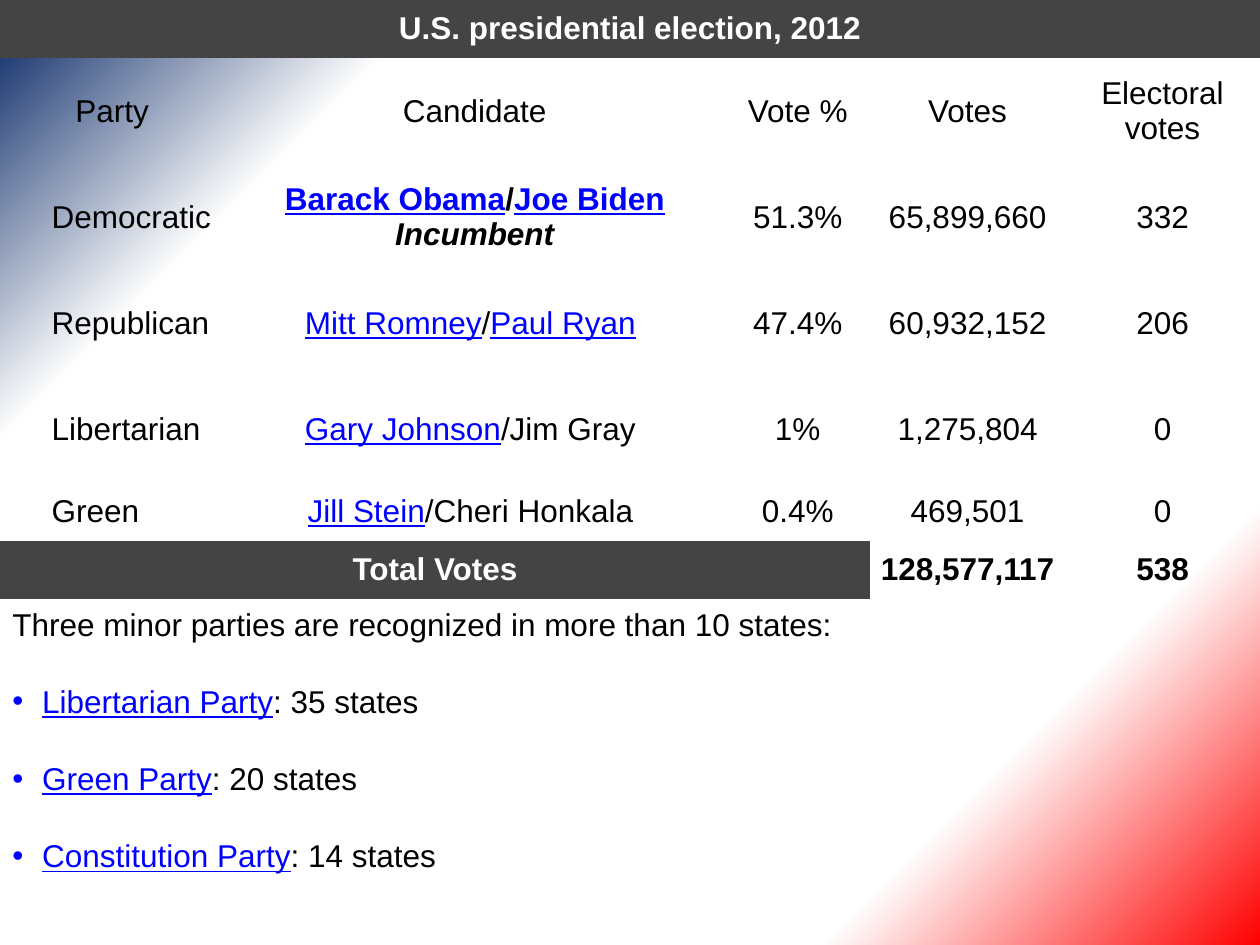
from pptx import Presentation
from pptx.dml.color import RGBColor
from pptx.enum.text import MSO_ANCHOR, PP_ALIGN
from pptx.oxml import parse_xml
from pptx.oxml.ns import nsdecls
from pptx.util import Cm, Pt
from lxml.etree import SubElement

# Content: a cell is a list of (text, style); b bold, i italic, u link look, w white
HEAD = [("U.S. presidential election, 2012", "bw")]
LABELS = ["Party", "Candidate", "Vote\u00a0%", "Votes", "Electoral votes"]
ROWS = [
    ("Democratic", [("Barack Obama", "bu"), ("/", "b"), ("Joe Biden", "bu"),
                    (" ", ""), ("Incumbent", "bi")],
     "51.3%", "65,899,660", "332"),
    ("Republican", [("Mitt Romney", "u"), ("/", ""), ("Paul Ryan", "u"), (" ", "")],
     "47.4%", "60,932,152", "206"),
    ("Libertarian", [("Gary Johnson", "u"), ("/Jim Gray ", "")],
     "1%", "1,275,804", "0"),
    ("Green", [("Jill Stein", "u"), ("/Cheri Honkala ", "")],
     "0.4%", "469,501", "0"),
]
TOTAL = [("Total Votes", "bw")]
SUMS = ["128,577,117", "538"]
INTRO = "Three minor parties are recognized in more than 10 states:"
STATES = [("Libertarian Party", 35), ("Green Party", 20), ("Constitution Party", 14)]

THEME = {
    "font": "Arial", "size": Pt(18),
    "text": RGBColor.from_string("000000"),
    "link": RGBColor.from_string("0000FF"),
    "white": RGBColor.from_string("FFFFFF"),
    "band": RGBColor.from_string("444444"),
    "stops": [(0, "FF0000"), (20, "FFFFFF"), (50, "FFFFFF"),
              (80, "FFFFFF"), (100, "002060")],
    "angle": 225,
    "plain": "{2D5ABB26-0587-4C30-8999-92F81FD0307C}",
}
COLS = [0.96, 3.56, 10.1, 2.92, 3.93, 3.93]
LOW, TALL = 1.17, 2.14
HIGHS = [LOW] + [TALL] * 4 + [LOW] * 2
WIDE, DEEP = 25.4, 19.05


def write(para, runs, align=PP_ALIGN.LEFT):
    para.alignment = align
    para.font.name, para.font.size = THEME["font"], THEME["size"]
    for text, style in runs:
        run = para.add_run()
        run.text = text
        font = run.font
        font.bold, font.italic = "b" in style, "i" in style
        font.underline = "u" in style
        tone = "link" if "u" in style else "white" if "w" in style else "text"
        font.color.rgb = THEME[tone]


def put(grid, row, col, runs, align=PP_ALIGN.CENTER):
    runs = [(runs, "")] if isinstance(runs, str) else runs
    write(grid.cell(row, col).text_frame.paragraphs[0], runs, align)


def band(grid, row, last, runs):
    cell = grid.cell(row, 0)
    cell.merge(grid.cell(row, last))
    cell.fill.solid()
    cell.fill.fore_color.rgb = THEME["band"]
    put(grid, row, 0, runs)


def paint(slide):
    stops = "".join(f'<a:gs pos="{pos * 1000}"><a:srgbClr val="{tone}"/></a:gs>'
                    for pos, tone in THEME["stops"])
    back = parse_xml(
        f'<p:bg {nsdecls("p", "a")}><p:bgPr><a:gradFill rotWithShape="1">'
        f'<a:gsLst>{stops}</a:gsLst>'
        f'<a:lin ang="{THEME["angle"] * 60000}" scaled="0"/></a:gradFill>'
        '<a:effectLst/></p:bgPr></p:bg>')
    slide.element.cSld.insert(0, back)


def results(slide):
    frame = slide.shapes.add_table(len(HIGHS), len(COLS), 0, 0,
                                   Cm(WIDE), Cm(sum(HIGHS)))
    grid = frame.table
    grid.first_row = grid.horz_banding = False
    grid._tbl.tblPr[0].text = THEME["plain"]
    for col, size in zip(grid.columns, COLS):
        col.width = Cm(size)
    for row, size in zip(grid.rows, HIGHS):
        row.height = Cm(size)
    for cell in grid.iter_cells():
        cell.fill.background()
        cell.vertical_anchor = MSO_ANCHOR.MIDDLE
        cell.margin_left = cell.margin_right = Cm(0.08)
        cell.margin_top = cell.margin_bottom = Cm(0.08)

    # Title and column labels
    band(grid, 0, 5, HEAD)
    grid.cell(1, 0).merge(grid.cell(1, 1))
    for col, text in zip([0, 2, 3, 4, 5], LABELS):
        put(grid, 1, col, text)

    # One row per party
    for row, items in enumerate(ROWS, 2):
        for col, runs in enumerate(items, 1):
            put(grid, row, col, runs,
                PP_ALIGN.LEFT if col == 1 else PP_ALIGN.CENTER)

    # Totals
    last = len(HIGHS) - 1
    band(grid, last, 3, TOTAL)
    for col, text in enumerate(SUMS, 4):
        put(grid, last, col, [(text, "b")])


def minor(slide):
    top = sum(HIGHS)
    box = slide.shapes.add_textbox(0, Cm(top), Cm(WIDE), Cm(5.64))
    frame = box.text_frame
    frame.word_wrap = True
    write(frame.paragraphs[0], [(INTRO, "")])
    for party, count in STATES:
        para = frame.add_paragraph()
        para.space_before = Pt(22.5)
        props = para._p.get_or_add_pPr()
        props.set("marL", str(Cm(0.6)))
        props.set("indent", str(-Cm(0.6)))
        space = props.nsmap["a"]
        SubElement(props, f"{{{space}}}buFont", typeface=THEME["font"])
        SubElement(props, f"{{{space}}}buChar", char="•")
        write(para, [(party, "u"), (f": {count} states", "")])


def main():
    deck = Presentation()
    deck.slide_width, deck.slide_height = Cm(WIDE), Cm(DEEP)
    slide = deck.slides.add_slide(deck.slide_layouts[6])
    paint(slide)
    results(slide)
    minor(slide)
    deck.save("out.pptx")


if __name__ == "__main__":
    main()
